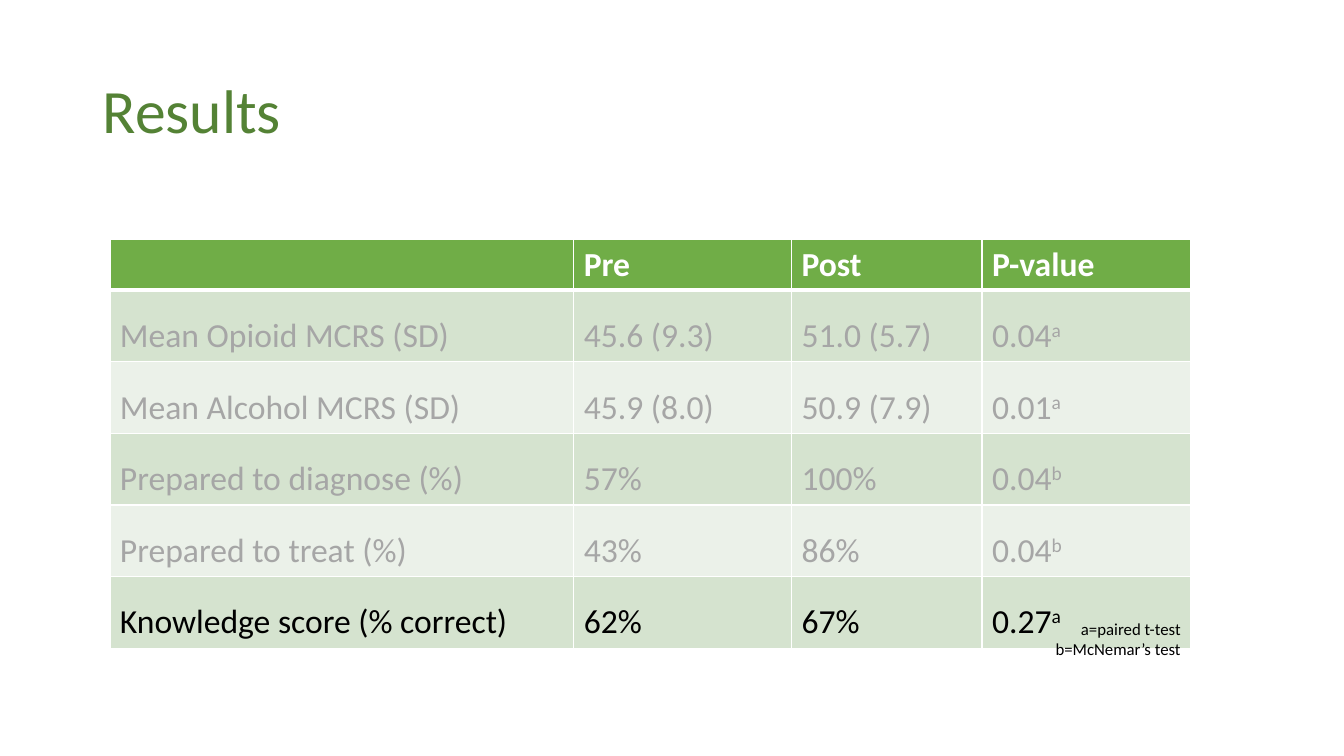
from lxml import etree
from pptx import Presentation
from pptx.dml.color import RGBColor
from pptx.enum.text import MSO_ANCHOR, PP_ALIGN
from pptx.oxml.ns import qn
from pptx.util import Inches, Pt

MIDDLE, TOP = MSO_ANCHOR.MIDDLE, MSO_ANCHOR.TOP
LEFT, RIGHT = PP_ALIGN.LEFT, PP_ALIGN.RIGHT

COLORS = {
    "title": "548235",
    "header": "70AD47",
    "band_dark": "D5E3CF",
    "band_light": "EBF1E9",
    "muted": "A6A6A6",
    "black": "000000",
    "white": "FFFFFF",
}
HEADINGS = ["", "Pre", "Post", "P-value"]
# Measure, pre, post, p-value, mark of the test used
RESULTS = [
    ("Mean Opioid MCRS (SD)", "45.6 (9.3)", "51.0 (5.7)", "0.04", "a"),
    ("Mean Alcohol MCRS (SD)", "45.9 (8.0)", "50.9 (7.9)", "0.01", "a"),
    ("Prepared to diagnose (%)", "57%", "100%", "0.04", "b"),
    ("Prepared to treat (%)", "43%", "86%", "0.04", "b"),
    ("Knowledge score (% correct)", "62%", "67%", "0.27", "a"),
]
COLUMN_WIDTHS = [4.6, 2.16, 1.89, 2.07]
HEADER_HEIGHT, ROW_HEIGHT = 0.5, 0.71


class SlideBuilder:
    def __init__(self, slide, font="Calibri"):
        self.slide = slide
        self.font = font

    def style(self, p, size, color, bold=False):
        p.font.name = self.font
        p.font.size = Pt(size)
        p.font.bold = bold
        p.font.color.rgb = RGBColor.from_string(COLORS[color])

    def text(self, box, lines, size, color, align=LEFT, anchor=TOP, spacing=1.0):
        sp = self.slide.shapes.add_textbox(*map(Inches, box))
        tf = sp.text_frame
        tf.word_wrap = True
        tf.vertical_anchor = anchor
        tf.text = "\n".join(lines)
        for p in tf.paragraphs:
            p.alignment = align
            p.line_spacing = spacing
            self.style(p, size, color)

    def borders(self, cell, bottom):
        """Draw white cell borders, 1 pt except for the given bottom width."""
        tc_pr = cell._tc.get_or_add_tcPr()
        for side, width in (("L", 1), ("R", 1), ("T", 1), ("B", bottom)):
            ln = etree.SubElement(tc_pr, qn(f"a:ln{side}"), w=str(Pt(width)))
            fill = etree.SubElement(ln, qn("a:solidFill"))
            etree.SubElement(fill, qn("a:srgbClr"), val=COLORS["white"])

    def cell(self, cell, text, fill, color, mark="", header=False):
        self.borders(cell, bottom=3 if header else 1)
        cell.fill.solid()
        cell.fill.fore_color.rgb = RGBColor.from_string(COLORS[fill])
        p = cell.text_frame.paragraphs[0]
        p.line_spacing = 1.0 if header else 1.5
        self.style(p, 24, color, bold=header)
        if text:
            p.add_run().text = text
        if mark:
            r = p.add_run()
            r.text = mark
            r.font._element.set("baseline", "30000")

    def table(self, left, top, headings, results):
        height = HEADER_HEIGHT + ROW_HEIGHT * len(results)
        table = self.slide.shapes.add_table(
            len(results) + 1, len(headings), Inches(left), Inches(top),
            Inches(sum(COLUMN_WIDTHS)), Inches(height)).table
        for column, width in zip(table.columns, COLUMN_WIDTHS):
            column.width = Inches(width)
        for i, row in enumerate(table.rows):
            row.height = Inches(ROW_HEIGHT if i else HEADER_HEIGHT)
        for j, heading in enumerate(headings):
            self.cell(table.cell(0, j), heading, "header", "white", header=True)
        for i, (*values, mark) in enumerate(results, start=1):
            fill = "band_dark" if i % 2 else "band_light"
            color = "black" if i == len(results) else "muted"
            for j, value in enumerate(values):
                last = j == len(values) - 1
                self.cell(table.cell(i, j), value, fill, color, mark if last else "")


def main():
    prs = Presentation()
    prs.slide_width, prs.slide_height = Inches(13.33), Inches(7.5)
    s = SlideBuilder(prs.slides.add_slide(prs.slide_layouts[6]))
    s.text((0.92, 0.4, 11.5, 1.45), ["Results"], 44, "title",
           anchor=MIDDLE, spacing=0.9)
    s.table(1.09, 2.38, HEADINGS, RESULTS)
    s.text((1.27, 6.09, 10.54, 0.5), ["a=paired t-test", "b=McNemar’s test"],
           12, "black", align=RIGHT)
    prs.save("out.pptx")


if __name__ == "__main__":
    main()
